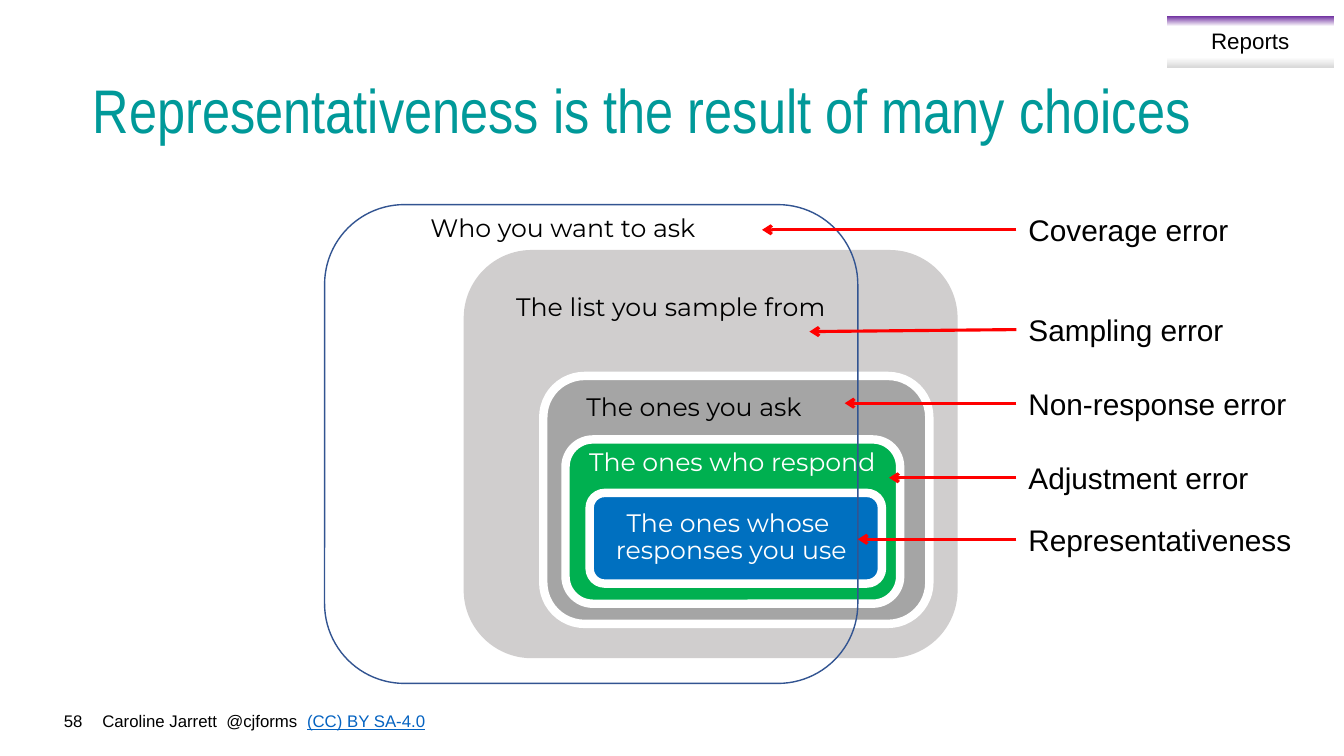
from collections import namedtuple

from lxml.etree import SubElement
from pptx import Presentation
from pptx.dml.color import RGBColor
from pptx.enum.shapes import MSO_CONNECTOR, MSO_SHAPE
from pptx.enum.text import MSO_ANCHOR, MSO_AUTO_SIZE, PP_ALIGN
from pptx.oxml.ns import qn
from pptx.util import Inches, Pt

COLORS = {
    "black": "000000", "white": "FFFFFF", "title": "009999", "link": "0563C1",
    "list": "D0CECE", "asked": "A5A5A5", "respond": "00B050", "used": "0070C0",
    "outline": "325491", "arrow": "FF0000", "purple": "7030A0", "shade": "D9D9D9",
}
COLUMNS, ROWS = 160, 90
WIDTH, HEIGHT = Inches(13.33), Inches(7.5)

# Outermost outline comes last because it lies over the nested groups.
# name, shape box, caption box, caption, caption colour (columns and rows)
GROUPS = [
    ("list", (16.56, 5.4, 58.8, 48.6), (18.24, 10.08, 45.96, 4.44),
     "The list you sample from", "black"),
    ("asked", (26.04, 20.4, 45.96, 29.52), (27.24, 22.08, 33.48, 4.44),
     "The ones you ask", "black"),
    ("respond", (28.68, 27.96, 39.84, 19.56), (27.24, 28.56, 42.6, 4.44),
     "The ones who respond", "white"),
    ("used", (31.56, 34.32, 34.8, 10.8), (32.64, 35.88, 31.56, 7.8),
     "The ones whose \vresponses you use", "white"),
    ("outline", (0, 0, 63.48, 57), (6.84, 0.72, 43.08, 4.44),
     "Who you want to ask", "black"),
]
# label, row of its middle, column of the arrow tip, drop of the tip
ERRORS = [
    ("Coverage error", 5.36, 0.72, 0),
    ("Sampling error", 17.24, 6.36, 0.24),
    ("Non-response error", 26, 10.56, 0),
    ("Adjustment error", 34.88, 15.84, 0),
    ("Representativeness", 42.2, 12.12, 0),
]


class Box(namedtuple("Box", "left top width height")):
    """A rectangle in grid columns and rows."""

    def inner(self, left, top, width, height):
        return Box(self.left + left, self.top + top, width, height)

    def emu(self):
        return (*grid_point(self.left, self.top), *grid_point(self.width, self.height))


def grid_point(column, row):
    return round(column * WIDTH / COLUMNS), round(row * HEIGHT / ROWS)


def color(name):
    return RGBColor.from_string(COLORS[name])


def add_run(paragraph, text, size, font="Arial", ink="black", underline=None):
    for index, line in enumerate(text.split("\v")):
        if index:
            paragraph.add_line_break()
        run = paragraph.add_run()
        run.text = line
        run.font.size, run.font.name = Pt(size), font
        run.font.underline = underline
        run.font.color.rgb = color(ink)


def write(frame, text, size, align=PP_ALIGN.LEFT, anchor=MSO_ANCHOR.TOP,
          spacing=None, **font):
    frame.word_wrap = True
    frame.auto_size = MSO_AUTO_SIZE.NONE
    frame.vertical_anchor = anchor
    paragraph = frame.paragraphs[0]
    paragraph.alignment, paragraph.line_spacing = align, spacing
    add_run(paragraph, text, size, **font)


def add_text(slide, box, text, size, **form):
    label = slide.shapes.add_textbox(*box.emu())
    write(label.text_frame, text, size, **form)
    return label


def add_title(slide, box, text):
    title = slide.shapes.title
    title.left, title.top, title.width, title.height = box.emu()
    write(title.text_frame, text, 44, anchor=MSO_ANCHOR.MIDDLE, spacing=0.9,
          font="Arial Narrow", ink="title")


def add_nested_groups(slide, box):
    for name, area, caption_area, caption, ink in GROUPS:
        group = slide.shapes.add_shape(
            MSO_SHAPE.ROUNDED_RECTANGLE, *box.inner(*area).emu())
        group.shadow.inherit = False
        if name == "outline":
            group.fill.background()
            group.line.color.rgb, group.line.width = color("outline"), Pt(1)
        else:
            group.fill.solid()
            group.fill.fore_color.rgb = color(name)
            if name == "list":
                group.line.fill.background()
            else:
                group.line.color.rgb, group.line.width = color("white"), Pt(6)
        add_text(slide, box.inner(*caption_area), caption, 18, spacing=0.9,
                 align=PP_ALIGN.CENTER, font="Montserrat", ink=ink)


def add_errors(slide, box):
    label_column, label_height = 31, 10.5
    for text, middle, tip_column, drop in ERRORS:
        label_box = box.inner(label_column, middle - label_height / 2,
                              box.width - label_column, label_height)
        label = add_text(slide, label_box, text, 21.3, anchor=MSO_ANCHOR.MIDDLE)
        label.text_frame.margin_left = Inches(0.12)
        start = grid_point(label_box.left, box.top + middle)
        tip = grid_point(box.left + tip_column, box.top + middle + drop)
        arrow = slide.shapes.add_connector(MSO_CONNECTOR.STRAIGHT, *start, *tip)
        arrow.begin_connect(label, 1)
        arrow.line.color.rgb, arrow.line.width = color("arrow"), Pt(2.25)
        properties = arrow._element.spPr
        SubElement(properties.find(qn("a:ln")), qn("a:tailEnd"), type="arrow")
        SubElement(properties, qn("a:effectLst"))


def add_section_tag(slide, box, text):
    tag = slide.shapes.add_shape(MSO_SHAPE.RECTANGLE, *box.emu())
    tag.shadow.inherit = False
    tag.line.fill.background()
    tag.fill.gradient()
    tag.fill.gradient_angle = 270
    stops = tag._element.spPr.find(qn("a:gradFill")).find(qn("a:gsLst"))
    for stop in list(stops):
        stops.remove(stop)
    for percent, name in ((0, "purple"), (20, "white"), (80, "white"), (100, "shade")):
        stop = SubElement(stops, qn("a:gs"), pos=str(percent * 1000))
        SubElement(stop, qn("a:srgbClr"), val=COLORS[name])
    add_text(slide, box.inner(0.6, 0.72, box.width - 1.2, 4.44), text, 16,
             align=PP_ALIGN.CENTER)


def add_footer(slide, box):
    number_width = 8.5
    add_text(slide, box.inner(0, 0, number_width, box.height), "58", 12,
             align=PP_ALIGN.RIGHT)
    credit = add_text(
        slide, box.inner(number_width, 0, box.width - number_width, box.height),
        "Caroline Jarrett  @cjforms  ", 12)
    add_run(credit.text_frame.paragraphs[0], "(CC) BY SA-4.0", 12,
            ink="link", underline=True)


def main():
    deck = Presentation()
    deck.slide_width, deck.slide_height = WIDTH, HEIGHT
    title_only = deck.slide_layouts[5]
    slide = deck.slides.add_slide(title_only)
    add_footer(slide, Box(2.5, 84, 77, 3.6))
    add_title(slide, Box(9.84, 4.8, 139.2, 17.4),
              "Representativeness is the result of many choices")
    add_nested_groups(slide, Box(38.64, 24.36, 75.36, 57))
    add_errors(slide, Box(90, 22, 68, 48))
    add_section_tag(slide, Box(138.88, 1.92, 19.92, 6.12), "Reports")
    deck.save("out.pptx")


if __name__ == "__main__":
    main()
